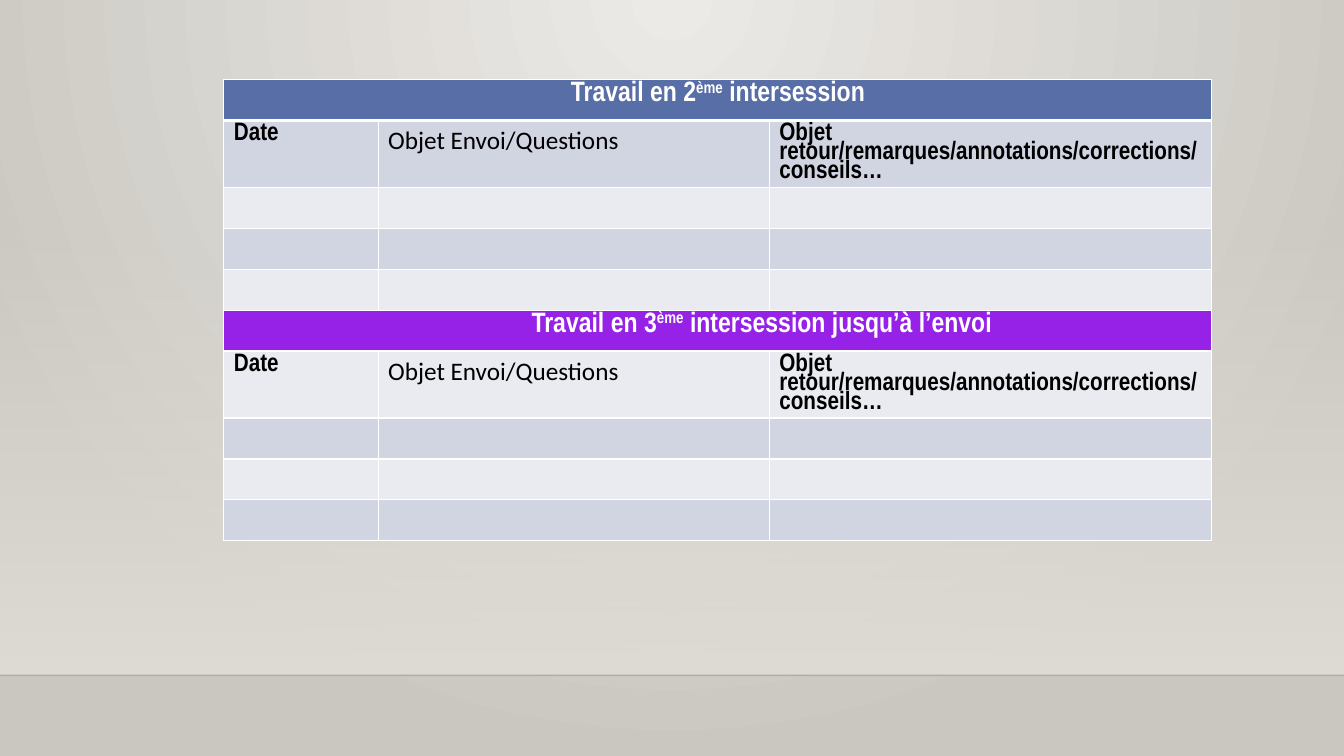
from lxml import etree
from pptx import Presentation, util as u
from pptx.dml.color import RGBColor
from pptx.enum import shapes, text
from pptx.oxml import parse_xml
from pptx.oxml.ns import nsdecls, qn

COLOURS = {
    "glow": "ECEAE7", "edge": "CAC7C1", "wall": "DFDBD5", "line": "000001",
    "blue": "586EA6", "purple": "9622E7", "dark": "D1D5E1", "light": "EAEBF1",
    "white": "FFFFFF", "black": "000000",
}
COLUMN_WIDTHS = (1.53, 3.88, 4.39)
ROW_HEIGHT = u.Pt(29.2)
LABELS = (
    ("Date", "Arial Narrow"),
    ("Objet Envoi/Questions", "Calibri"),
    ("Objet retour/remarques/annotations/corrections/conseils…", "Arial Narrow"),
)
SECTIONS = (
    ("blue", ("Travail en 2", "ème", " intersession"), 0.1),
    ("purple", ("Travail en 3", "ème", " intersession jusqu’à l’envoi"), 0.97),
)
SECTION_ROWS = 5


class SlideBuilder:
    """Hold the style and the current slide, and draw its elements."""

    def __init__(self, presentation):
        self.slide = presentation.slides.add_slide(presentation.slide_layouts[6])

    def gradient(self, stops, direction):
        marks = "".join(
            f'<a:gs pos="{place * 1000}"><a:srgbClr val="{COLOURS[name]}">'
            f'<a:alpha val="{alpha * 1000}"/></a:srgbClr></a:gs>'
            for place, name, alpha in stops
        )
        return parse_xml(
            f'<a:gradFill {nsdecls("a")} rotWithShape="1"><a:gsLst>{marks}</a:gsLst>'
            f"{direction}</a:gradFill>"
        )

    def background(self):
        fill = self.slide.background.fill
        fill.solid()
        properties = self.slide.element.find(".//" + qn("p:bgPr"))
        circle = ('<a:path path="circle"><a:fillToRect l="43000" t="0" '
                  'r="43000" b="100000"/></a:path>')
        properties.replace(
            properties[0],
            self.gradient(((0, "glow", 100), (100, "edge", 100)), circle),
        )

    def wall(self, left, top, width, height):
        shape = self.slide.shapes.add_shape(
            shapes.MSO_SHAPE.RECTANGLE,
            *(u.Inches(length) for length in (left, top, width, height)),
        )
        shape.shadow.inherit = False
        shape.line.fill.background()
        shape.fill.solid()
        properties = shape._element.spPr
        properties.replace(
            properties.find(qn("a:solidFill")),
            self.gradient(((0, "wall", 0), (100, "wall", 100)),
                          '<a:lin ang="5400000" scaled="0"/>'),
        )

    def floor_line(self, top, width):
        connector = self.slide.shapes.add_connector(
            shapes.MSO_CONNECTOR.STRAIGHT,
            0, u.Inches(top), u.Inches(width), u.Inches(top),
        )
        connector.line.width = u.Pt(1)
        connector.line.color.rgb = RGBColor.from_string(COLOURS["line"])
        properties = connector._element.spPr
        colour = properties.find(".//" + qn("a:srgbClr"))
        etree.SubElement(colour, qn("a:alpha")).set("val", "20000")
        etree.SubElement(properties, qn("a:effectLst"))

    def style_cell(self, cell, fill, top=1, bottom=1):
        properties = cell._tc.get_or_add_tcPr()
        for side, width in (("L", 1), ("R", 1), ("T", top), ("B", bottom)):
            properties.append(parse_xml(
                f'<a:ln{side} {nsdecls("a")} w="{u.Pt(width)}"><a:solidFill>'
                f'<a:srgbClr val="{COLOURS["white"]}"/></a:solidFill></a:ln{side}>'
            ))
        cell.fill.solid()
        cell.fill.fore_color.rgb = RGBColor.from_string(COLOURS[fill])

    def cell_text(self, cell, parts, font, size, colour):
        paragraph = cell.text_frame.paragraphs[0]
        for part in parts:
            run = paragraph.add_run()
            run.text = part
            if part == "ème":
                run.font._element.set("baseline", "30000")
        bold = font == "Arial Narrow"
        paragraph.line_spacing = 0.8 if bold else 1.0
        paragraph.font.name = font
        paragraph.font.size = u.Pt(size)
        paragraph.font.bold = bold
        paragraph.font.color.rgb = RGBColor.from_string(COLOURS[colour])
        return paragraph

    def table(self, left, top):
        count = SECTION_ROWS * len(SECTIONS)
        table = self.slide.shapes.add_table(
            count, len(COLUMN_WIDTHS), u.Inches(left), u.Inches(top),
            u.Inches(sum(COLUMN_WIDTHS)), ROW_HEIGHT * count,
        ).table
        table.first_row = table.horz_banding = False
        for column, width in zip(table.columns, COLUMN_WIDTHS):
            column.width = u.Inches(width)
        for index, row in enumerate(table.rows):
            row.height = ROW_HEIGHT
            section, offset = divmod(index, SECTION_ROWS)
            band = "dark" if index % 2 else "light"
            fill = band if offset else SECTIONS[section][0]
            for cell in row.cells:
                self.style_cell(cell, fill, 3 if index == 1 else 1,
                                3 if index == 0 else 1)
        for section, (_, title, margin) in enumerate(SECTIONS):
            first = section * SECTION_ROWS
            header = table.cell(first, 0)
            header.merge(table.cell(first, len(COLUMN_WIDTHS) - 1))
            header.margin_left = u.Inches(margin)
            paragraph = self.cell_text(header, title, "Arial Narrow", 20, "white")
            paragraph.alignment = text.PP_ALIGN.CENTER
            for column, (label, font) in enumerate(LABELS):
                cell = table.cell(first + 1, column)
                self.cell_text(cell, (label,), font, 18, "black")


def main():
    presentation = Presentation()
    presentation.slide_width = u.Inches(13.33)
    presentation.slide_height = u.Inches(7.5)
    builder = SlideBuilder(presentation)
    builder.background()
    builder.wall(0, 2.21, 13.33, 4.49)
    builder.floor_line(6.7, 13.33)
    builder.table(2.22, 0.79)
    presentation.save("out.pptx")


if __name__ == "__main__":
    main()
